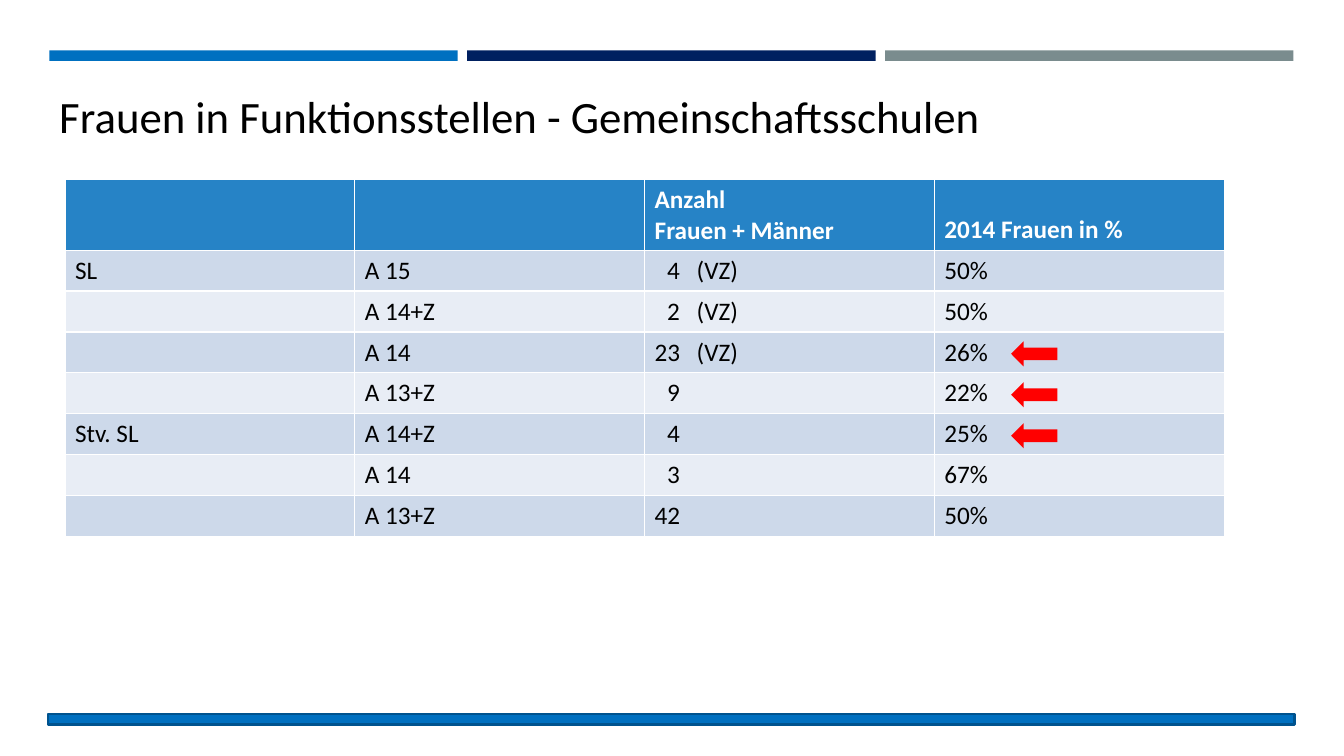
import lxml.etree
import pptx
import pptx.dml.color
import pptx.enum.shapes
import pptx.enum.text
import pptx.oxml.ns
import pptx.util

RGB = pptx.dml.color.RGBColor
SHAPE = pptx.enum.shapes.MSO_SHAPE
ANCHOR = pptx.enum.text.MSO_ANCHOR
WHITE = RGB(0xFF, 0xFF, 0xFF)
BLACK = RGB(0x00, 0x00, 0x00)
BLUE = RGB(0x00, 0x70, 0xC0)
NAVY = RGB(0x00, 0x20, 0x60)
GREY = RGB(0x7A, 0x8C, 0x8E)
EDGE = RGB(0x00, 0x53, 0x8E)
HEAD = RGB(0x26, 0x83, 0xC6)
BANDS = (RGB(0xCD, 0xD9, 0xEA), RGB(0xE8, 0xED, 0xF5))
RED = RGB(0xFF, 0x00, 0x00)
FONT = "Calibri"
TABS = ((24, "r"), (40, "l"))
HEAD_H, ROW_H = 66, 39
ROWS = (
    ("", "", "Anzahl\nFrauen + Männer", "2014 Frauen in %"),
    ("SL", "A 15", "\t4\t(VZ)", "50%"),
    ("", "A 14+Z", "\t2\t(VZ)", "50%"),
    ("", "A 14", "\t23\t(VZ)", "26%"),
    ("", "A 13+Z", "\t9", "22%"),
    ("Stv. SL", "A 14+Z", "\t4", "25%"),
    ("", "A 14", "\t3", "67%"),
    ("", "A 13+Z", "\t42", "50%"),
)
MARKED = (3, 4, 5)


def px(n):
    """Turn px into EMU."""
    return pptx.util.Emu(n * 9525)


def add_block(slide, kind, box, fill, edge=None):
    """Draw a filled shape, with an outline if an edge colour is given."""
    shape = slide.shapes.add_shape(kind, *map(px, box))
    shape.shadow.inherit = False
    shape.fill.solid()
    shape.fill.fore_color.rgb = fill
    if edge is None:
        shape.line.fill.background()
    else:
        shape.line.color.rgb = edge
        shape.line.width = pptx.util.Pt(1.75)


def add_text(para, text, size, color, bold=False):
    """Add one run per line of text, with line breaks between."""
    for i, line in enumerate(text.split("\n")):
        if i:
            para.add_line_break()
        run = para.add_run()
        run.text = line
        run.font.name = FONT
        run.font.size = pptx.util.Pt(size)
        run.font.bold = bold
        run.font.color.rgb = color


def add_tabs(para):
    """Set the tab stops that align the counts and their notes."""
    qn = pptx.oxml.ns.qn
    stops = lxml.etree.SubElement(para._p.get_or_add_pPr(), qn("a:tabLst"))
    for pos, side in TABS:
        lxml.etree.SubElement(stops, qn("a:tab"), pos=str(px(pos)), algn=side)


def add_bars(slide, box):
    """Draw three coloured bars evenly across the box."""
    left, top, width, height = box
    gap = 9
    bar = (width - 2 * gap) // 3
    for i, fill in enumerate((BLUE, NAVY, GREY)):
        spot = (left + i * (bar + gap), top, bar, height)
        add_block(slide, SHAPE.RECTANGLE, spot, fill)


def add_title(slide, box, text):
    """Write the slide title in the middle of the box."""
    frame = slide.shapes.add_textbox(*map(px, box)).text_frame
    frame.word_wrap = True
    frame.vertical_anchor = ANCHOR.MIDDLE
    para = frame.paragraphs[0]
    para.line_spacing = 0.9
    add_text(para, text, 32, BLACK)


def add_grid(slide, box):
    """Build the table in the box and point arrows at the marked rows."""
    left, top, width, height = box
    cols = len(ROWS[0])
    table = slide.shapes.add_table(len(ROWS), cols, *map(px, box)).table
    for col in table.columns:
        col.width = px(width // cols)
    for r, row in enumerate(ROWS):
        table.rows[r].height = px(ROW_H if r else HEAD_H)
        for c, text in enumerate(row):
            cell = table.cell(r, c)
            cell.fill.solid()
            cell.fill.fore_color.rgb = BANDS[(r - 1) % 2] if r else HEAD
            para = cell.text_frame.paragraphs[0]
            if r == 0:
                cell.vertical_anchor = ANCHOR.BOTTOM
            if "\t" in text:
                add_tabs(para)
            if text:
                add_text(para, text, 18, BLACK if r else WHITE, r == 0)
    for r in MARKED:
        y = top + HEAD_H + (r - 1) * ROW_H + 10
        add_block(slide, SHAPE.LEFT_ARROW, (left + 901, y, 44, 24), RED)


def main():
    """Build the slide and save it."""
    deck = pptx.Presentation()
    deck.slide_width, deck.slide_height = px(1280), px(720)
    slide = deck.slides.add_slide(deck.slide_layouts[6])
    add_bars(slide, (47, 48, 1186, 10))
    add_block(slide, SHAPE.RECTANGLE, (46, 680, 1187, 10), BLUE, EDGE)
    add_title(slide, (47, 56, 1186, 114),
              "Frauen in Funktionsstellen - Gemeinschaftsschulen")
    add_grid(slide, (62, 171, 1104, HEAD_H + 7 * ROW_H))
    deck.save("out.pptx")


if __name__ == "__main__":
    main()
